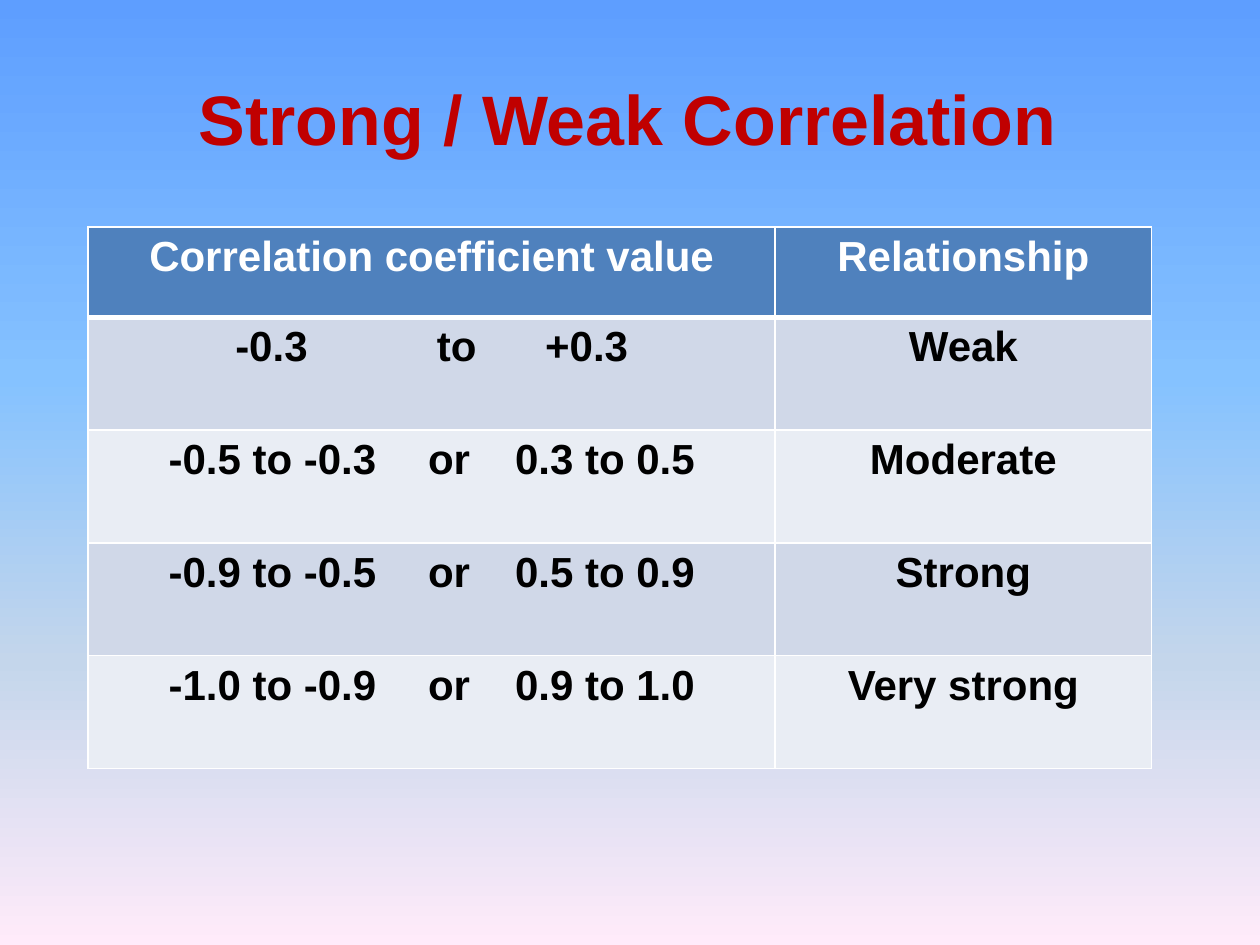
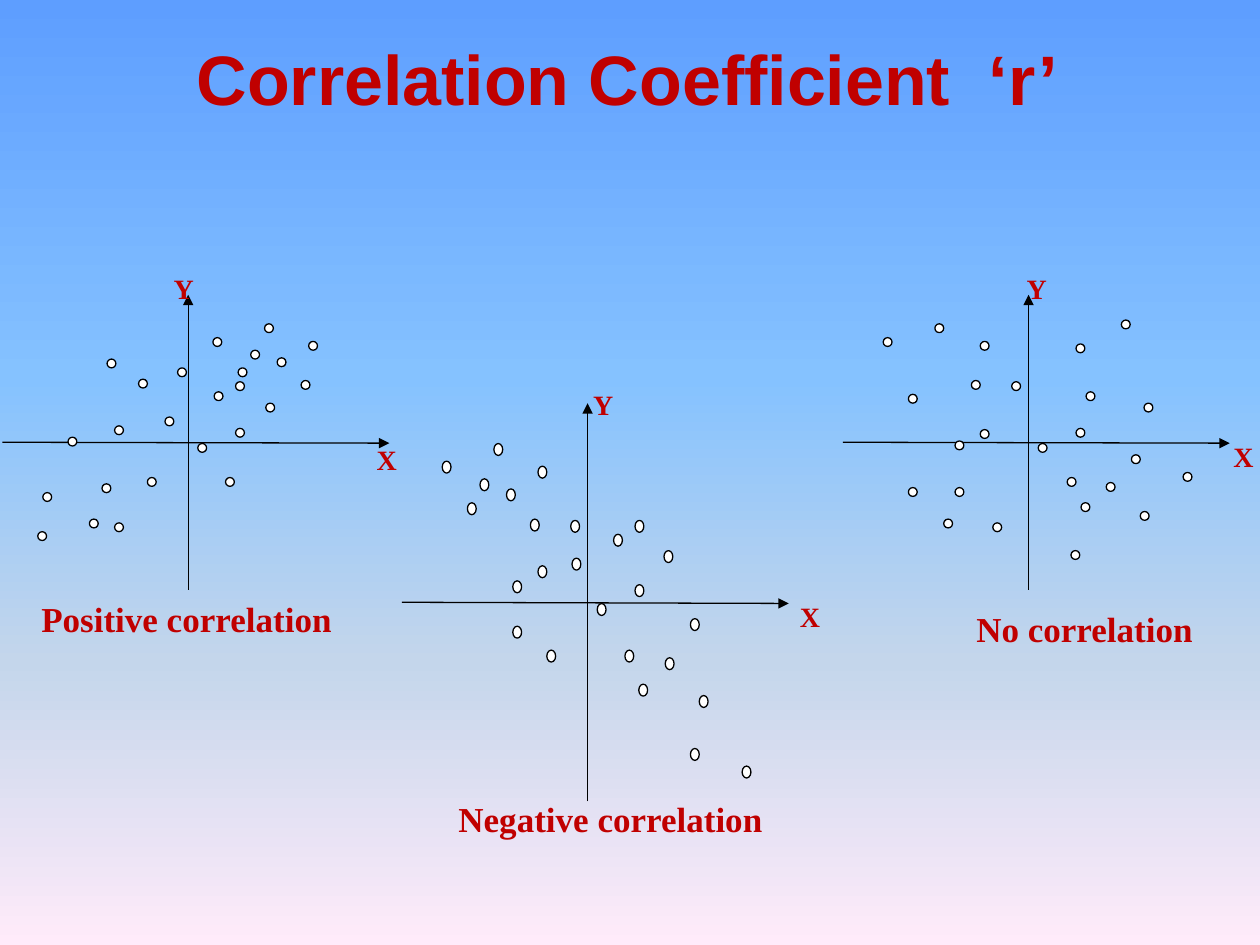
from typing import NamedTuple

from lxml import etree
from pptx import Presentation
from pptx.dml.color import RGBColor
from pptx.enum.shapes import MSO_CONNECTOR, MSO_SHAPE
from pptx.enum.text import PP_ALIGN
from pptx.oxml.ns import qn
from pptx.util import Inches, Pt

LEFT, CENTER = PP_ALIGN.LEFT, PP_ALIGN.CENTER
STRAIGHT, OVAL = MSO_CONNECTOR.STRAIGHT, MSO_SHAPE.OVAL

SANS, SERIF = "Arial", "Times New Roman"
RED, BLACK, WHITE = "C00000", "000000", "FFFFFF"
HEADER_FILL, BAND_FILLS = "4F81BD", ("D0D8E8", "E9EDF4")
SKY_STOPS = ((0, "5E9EFF"), (40, "85C2FF"), (70, "C4D6EB"), (100, "FFEBFA"))

STEP = 0.01  # inches per column and row of the dot grid

RANGE_ROWS = (
    ("-0.3\tto\t+0.3", "Weak", (1.6, 2.46)),
    ("-0.5 to -0.3\tor\t0.3 to 0.5", "Moderate", (2.06, 2.75)),
    ("-0.9 to -0.5\tor\t0.5 to 0.9", "Strong", (2.06, 2.75)),
    ("-1.0 to -0.9\tor\t0.9 to 1.0", "Very strong", (2.06, 2.75)),
)


class Box(NamedTuple):
    left: float
    top: float
    width: float
    height: float

    def inside(self, left, top, width, height):
        """Box of the given size, offset from this box's corner."""
        return Box(self.left + left, self.top + top, width, height)

    def lengths(self):
        return [Inches(value) for value in self]


class Plot(NamedTuple):
    box: Box
    caption: str
    caption_at: tuple
    caption_width: float
    y_at: tuple
    x_at: tuple
    dots: tuple  # (column, row) of each dot's corner


PLOTS = (
    Plot(Box(3.19, 3.2, 3.07, 3.16), "Negative correlation",
         (0.35, 3.08), 3.04, (1.42, -0.17), (3.06, 1.51),
         ((73, 32), (185, 93), (188, 223), (115, 196), (185, 144),
          (102, 92), (270, 288), (208, 117), (108, 129), (168, 104),
          (177, 196), (88, 177), (155, 159), (209, 202), (229, 171),
          (62, 60), (83, 68), (229, 274), (236, 232), (135, 123),
          (32, 46), (88, 141), (108, 50), (134, 93), (52, 79))),
    Plot(Box(6.69, 2.34, 3.07, 2.34), "No correlation",
         (0.96, 2.43), 2.12, (1.36, -0.23), (3.0, 1.1),
         ((73, 23), (185, 39), (189, 165), (52, 153), (185, 106),
          (102, 68), (270, 141), (239, 86), (109, 107), (193, 77),
          (178, 145), (89, 153), (155, 118), (209, 149), (229, 127),
          (119, 181), (80, 178), (181, 203), (236, 172), (221, 20),
          (32, 34), (89, 116), (109, 37), (134, 69), (52, 79))),
    Plot(Box(0.02, 2.34, 3.07, 2.34), "Positive correlation",
         (0.21, 2.35), 3.04, (1.26, -0.23), (2.87, 1.12),
         ((208, 23), (185, 69), (32, 157), (115, 145), (185, 106),
          (237, 68), (69, 178), (209, 86), (108, 67), (168, 77),
          (177, 145), (89, 181), (155, 118), (52, 113), (139, 58),
          (197, 44), (218, 50), (28, 188), (79, 150), (83, 51),
          (167, 34), (89, 104), (243, 37), (129, 97), (187, 58))),
)


def rgb(value):
    return RGBColor.from_string(value)


def add_xml(parent, tag, **attributes):
    return etree.SubElement(parent, qn(tag), attributes)


def style(para, size, color, font=SANS, align=CENTER):
    para.alignment = align
    para.font.name = font
    para.font.size = Pt(size)
    para.font.bold = True
    para.font.color.rgb = rgb(color)


def add_text(page, box, text, size, font=SANS, align=CENTER, wrap=True):
    frame = page.shapes.add_textbox(*box.lengths()).text_frame
    frame.word_wrap = wrap
    frame.text = text
    style(frame.paragraphs[0], size, RED, font, align)


def add_page(deck, title, title_box):
    """Add a slide with the sky gradient and a red title."""
    page = deck.slides.add_slide(deck.slide_layouts[6])
    fill = page.background.fill
    fill.gradient()
    fill.gradient_angle = 270
    stops = next(page.element.iter(qn("a:gsLst")))
    for stop in list(stops):
        stops.remove(stop)
    for percent, color in SKY_STOPS:
        stop = add_xml(stops, "a:gs", pos=str(percent * 1000))
        add_xml(stop, "a:srgbClr", val=color)
    add_text(page, title_box, title, 40)
    return page


def set_borders(cell, **widths):
    """Draw white borders; the keys are the sides L, R, T and B."""
    properties = cell._tc.get_or_add_tcPr()
    for index, (side, width) in enumerate(widths.items()):
        line = etree.Element(qn("a:ln" + side), w=str(Pt(width)))
        add_xml(add_xml(line, "a:solidFill"), "a:srgbClr", val=WHITE)
        properties.insert(index, line)


def set_tabs(para, stops):
    tabs = etree.Element(qn("a:tabLst"))
    for stop in stops:
        add_xml(tabs, "a:tab", pos=str(Inches(stop)), algn="l")
    properties = para._p.get_or_add_pPr()
    properties.insert(0, tabs)


def fill_cell(cell, text, fill, color, top, bottom):
    cell.text = text
    cell.fill.solid()
    cell.fill.fore_color.rgb = rgb(fill)
    set_borders(cell, L=1, R=1, T=top, B=bottom)
    style(cell.text_frame.paragraphs[0], 24, color)


def add_strength_table(page, box):
    table = page.shapes.add_table(
        len(RANGE_ROWS) + 1, 2, *box.lengths()).table
    header_height = 0.72
    row_height = (box.height - header_height) / len(RANGE_ROWS)
    for column, share in zip(table.columns, (0.646, 0.354)):
        column.width = Inches(box.width * share)
    table.rows[0].height = Inches(header_height)
    for column, text in enumerate(("Correlation coefficient value",
                                   "Relationship")):
        fill_cell(table.cell(0, column), text, HEADER_FILL, WHITE, 1, 3)
    for row, (values, strength, tabs) in enumerate(RANGE_ROWS, 1):
        table.rows[row].height = Inches(row_height)
        fill = BAND_FILLS[(row - 1) % 2]
        top = 3 if row == 1 else 1
        for column, text in enumerate((values, strength)):
            fill_cell(table.cell(row, column), text, fill, BLACK, top, 1)
        set_tabs(table.cell(row, 0).text_frame.paragraphs[0], tabs)


def add_axis(page, box, start, end):
    """Draw an arrow between two points given as shares of the box."""
    ends = [Inches(value) for x, y in (start, end)
            for value in (box.left + x * box.width, box.top + y * box.height)]
    axis = page.shapes.add_connector(STRAIGHT, *ends)
    axis.line.color.rgb = rgb(BLACK)
    axis.line.width = Pt(0.75)
    properties = axis.element.spPr
    add_xml(properties.find(qn("a:ln")), "a:tailEnd", type="triangle")
    add_xml(properties, "a:effectLst")


def add_dot(page, box):
    dot = page.shapes.add_shape(OVAL, *box.lengths())
    dot.shadow.inherit = False
    dot.fill.solid()
    dot.fill.fore_color.rgb = rgb(WHITE)
    dot.line.color.rgb = rgb(BLACK)
    dot.line.width = Pt(0.75)


def add_scatter(page, plot):
    box = plot.box
    add_axis(page, box, (0, 0.5), (1, 0.5 + 0.003))
    add_axis(page, box, (0.48, 1), (0.48, 0))
    for column, row in plot.dots:
        add_dot(page, box.inside(column * STEP, row * STEP,
                                 0.07, box.height * 0.03))
    add_text(page, box.inside(*plot.caption_at, plot.caption_width, 0.44),
             plot.caption, 20, SERIF, LEFT)
    for letter, corner in (("Y", plot.y_at), ("X", plot.x_at)):
        add_text(page, box.inside(*corner, 0.36, 0.37),
                 letter, 16, SERIF, LEFT, wrap=False)


def main():
    deck = Presentation()
    deck.slide_width, deck.slide_height = Inches(10), Inches(7.5)

    strength_page = add_page(deck, "Strong / Weak Correlation",
                             Box(0.7, 0.55, 8.56, 0.77))
    add_strength_table(strength_page, Box(0.7, 1.8, 8.44, 4.3))

    scatter_page = add_page(deck, "Correlation Coefficient  ‘r’",
                            Box(0.23, 0.23, 9.5, 1.03))
    for plot in PLOTS:
        add_scatter(scatter_page, plot)

    deck.save("out.pptx")


if __name__ == "__main__":
    main()
